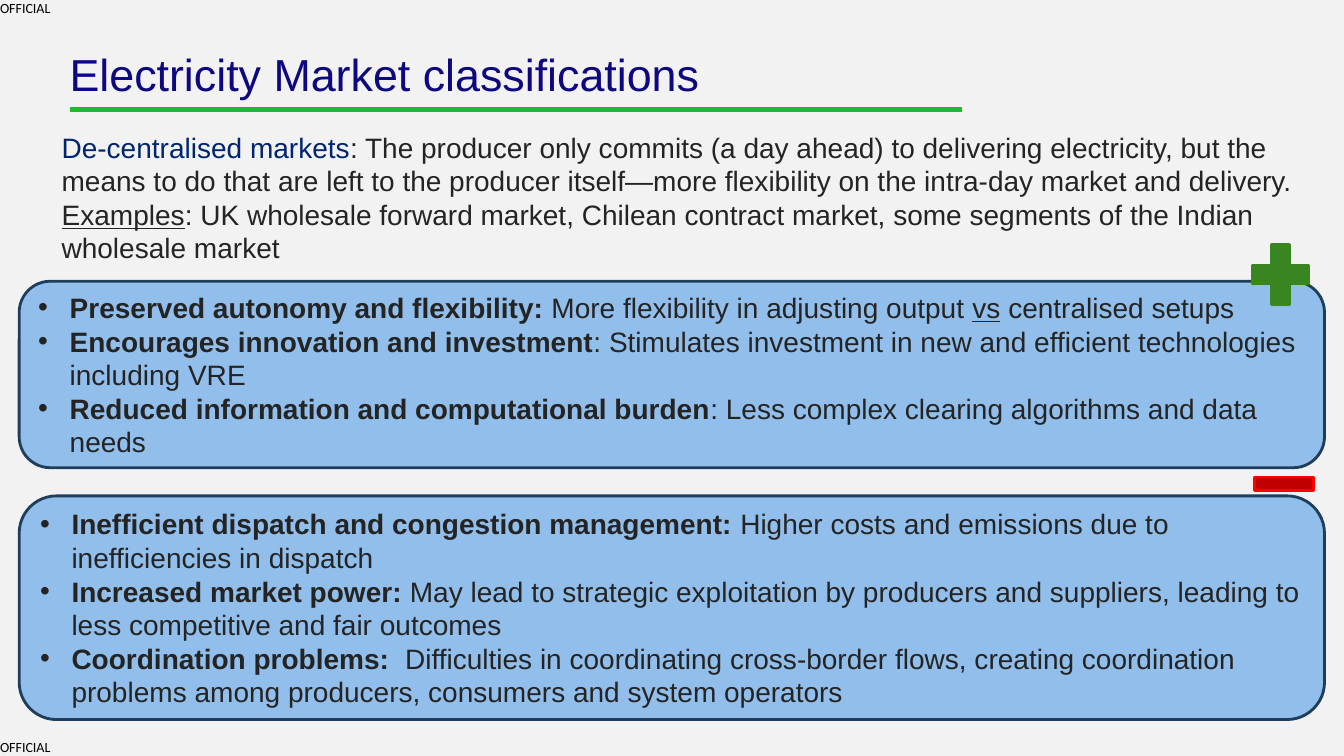
from lxml.etree import SubElement
from pptx import Presentation
from pptx.dml.color import RGBColor
from pptx.enum.shapes import MSO_SHAPE
from pptx.enum.text import MSO_ANCHOR, MSO_AUTO_SIZE, PP_ALIGN
from pptx.oxml.ns import qn
from pptx.util import Pt

PAGE_GREY = RGBColor(0xF2, 0xF2, 0xF2)
TITLE_BLUE = RGBColor(0x0D, 0x07, 0x80)
TERM_BLUE = RGBColor(0x00, 0x24, 0x6D)
TEXT_DARK = RGBColor(0x24, 0x24, 0x24)
BLACK = RGBColor(0x00, 0x00, 0x00)
RULE_GREEN = RGBColor(0x1C, 0xBC, 0x2B)
PANEL_BLUE = RGBColor(0x91, 0xBE, 0xEA)
PANEL_EDGE = RGBColor(0x1F, 0x3E, 0x5C)
PLUS_GREEN = RGBColor(0x39, 0x85, 0x21)
MINUS_RED = RGBColor(0xC0, 0x00, 0x00)
MINUS_EDGE = RGBColor(0xFF, 0x00, 0x00)

PAGE_WIDTH, PAGE_HEIGHT = 960, 540
PANEL_LEFT, PANEL_WIDTH = 13.7, 932.4

# Each paragraph is a list of (text, style) spans
INTRODUCTION = [
    [("De-centralised markets", "term"),
     (": The producer only commits (a day ahead) to delivering electricity, but the means to do "
      "that are left to the producer itself—more flexibility on the intra-day market and delivery.", "plain")],
    [("Examples", "underline"),
     (": UK wholesale forward market, Chilean contract market, some segments of the Indian "
      "wholesale market", "plain")],
]
BENEFITS = [
    [("Preserved autonomy and flexibility:", "bold"),
     (" More flexibility in adjusting output ", "plain"),
     ("vs", "underline"), (" centralised setups", "plain")],
    [("Encourages innovation and investment", "bold"),
     (": Stimulates investment in new and efficient technologies including VRE", "plain")],
    [("Reduced information and computational burden", "bold"),
     (": Less complex clearing algorithms and data needs", "plain")],
]
DRAWBACKS = [
    [("Inefficient dispatch and congestion management: ", "bold"),
     ("Higher costs and emissions due to inefficiencies in dispatch", "plain")],
    [("Increased market power: ", "bold"),
     ("May lead to strategic exploitation by producers and suppliers, leading to less "
      "competitive and fair outcomes", "plain")],
    [("Coordination problems:  ", "bold"),
     ("Difficulties in coordinating cross-border flows, creating coordination problems among "
      "producers, consumers and system operators", "plain")],
]


class SlideBuilder:
    """Holds the text style and the current slide."""

    def __init__(self, slide, font="Arial", size=20):
        self.slide = slide
        self.font = font
        self.size = size

    def place(self, box, left, top, width, height):
        box.left, box.top, box.width, box.height = Pt(left), Pt(top), Pt(width), Pt(height)

    def prepare_frame(self, box, anchor, side=0, end=0):
        frame = box.text_frame
        frame.word_wrap = True
        frame.auto_size = MSO_AUTO_SIZE.NONE
        frame.vertical_anchor = anchor
        frame.margin_left = frame.margin_right = Pt(side)
        frame.margin_top = frame.margin_bottom = Pt(end)
        return frame

    def format_font(self, font, size, color, name=None):
        font.name = name or self.font
        font.size = Pt(size)
        font.color.rgb = color

    def write_paragraphs(self, frame, paragraphs, margin, bullet=False):
        for index, spans in enumerate(paragraphs):
            para = frame.add_paragraph() if index else frame.paragraphs[0]
            para.alignment = PP_ALIGN.LEFT
            para.space_before = Pt(0)
            for text, style in spans:
                span = para.add_run()
                span.text = text
                self.format_font(span.font, self.size, TERM_BLUE if style == "term" else TEXT_DARK)
                span.font.bold = style == "bold"
                span.font.underline = style == "underline"
            self.set_bullet(para, margin, bullet)

    def set_bullet(self, para, margin, bullet):
        properties = para._p.get_or_add_pPr()
        properties.set("marL", str(Pt(margin)))
        properties.set("indent", str(Pt(-margin) if bullet else 0))
        if bullet:
            SubElement(properties, qn("a:buFont"), typeface=self.font)
            SubElement(properties, qn("a:buChar"), char="•")
        else:
            SubElement(properties, qn("a:buNone"))

    def title(self, text, *place):
        box = self.slide.shapes.title
        self.place(box, *place)
        frame = self.prepare_frame(box, MSO_ANCHOR.TOP)
        frame.text = text
        para = frame.paragraphs[0]
        para.alignment = PP_ALIGN.LEFT
        para.line_spacing = 0.9
        self.format_font(para.runs[0].font, 32, TITLE_BLUE)

    def body(self, paragraphs, *place):
        box = self.slide.placeholders[1]
        self.place(box, *place)
        self.write_paragraphs(self.prepare_frame(box, MSO_ANCHOR.TOP), paragraphs, 44)

    def label(self, text, *place):
        box = self.slide.shapes.add_textbox(*map(Pt, place))
        frame = self.prepare_frame(box, MSO_ANCHOR.TOP)
        frame.text = text
        self.format_font(frame.paragraphs[0].runs[0].font, 10, BLACK, "Calibri")

    def shape(self, kind, fill, edge, weight, *place, adjustment=None):
        shape = self.slide.shapes.add_shape(kind, *map(Pt, place))
        shape.shadow.inherit = False
        shape.fill.solid()
        shape.fill.fore_color.rgb = fill
        shape.line.color.rgb = edge
        shape.line.width = Pt(weight)
        if adjustment is not None:
            shape.adjustments[0] = adjustment
        return shape

    def panel(self, paragraphs, top, height):
        box = self.shape(MSO_SHAPE.ROUNDED_RECTANGLE, PANEL_BLUE, PANEL_EDGE, 2,
                         PANEL_LEFT, top, PANEL_WIDTH, height, adjustment=0.167)
        frame = self.prepare_frame(box, MSO_ANCHOR.MIDDLE, 7.2, 3.6)
        self.write_paragraphs(frame, paragraphs, 22.5, bullet=True)


def main():
    deck = Presentation()
    deck.slide_width, deck.slide_height = Pt(PAGE_WIDTH), Pt(PAGE_HEIGHT)
    page = deck.slides.add_slide(deck.slide_layouts[1])
    page.background.fill.solid()
    page.background.fill.fore_color.rgb = PAGE_GREY
    builder = SlideBuilder(page)

    # Classification labels at top and bottom
    for top in (0, PAGE_HEIGHT - 12.2):
        builder.label("OFFICIAL", 0, top, 38, 12.2)

    # Title, green rule and introduction
    builder.shape(MSO_SHAPE.RECTANGLE, RULE_GREEN, RULE_GREEN, 0.75, 50.4, 77, 636.5, 2.9)
    builder.title("Electricity Market classifications", 49.7, 37.4, 676, 34.6)
    builder.body(INTRODUCTION, 0, 92.9, PAGE_WIDTH, 72.7)

    # Benefits with plus sign
    builder.panel(BENEFITS, 200.9, 133.2)
    builder.shape(MSO_SHAPE.MATH_PLUS, PLUS_GREEN, PLUS_GREEN, 2,
                  887, 167, 55.4, 58.3, adjustment=0.235)

    # Drawbacks with minus sign
    builder.panel(DRAWBACKS, 354.2, 159.8)
    builder.shape(MSO_SHAPE.MATH_MINUS, MINUS_RED, MINUS_EDGE, 2,
                  888.5, 325.4, 57.6, 40.3, adjustment=0.235)

    deck.save("out.pptx")


if __name__ == "__main__":
    main()
